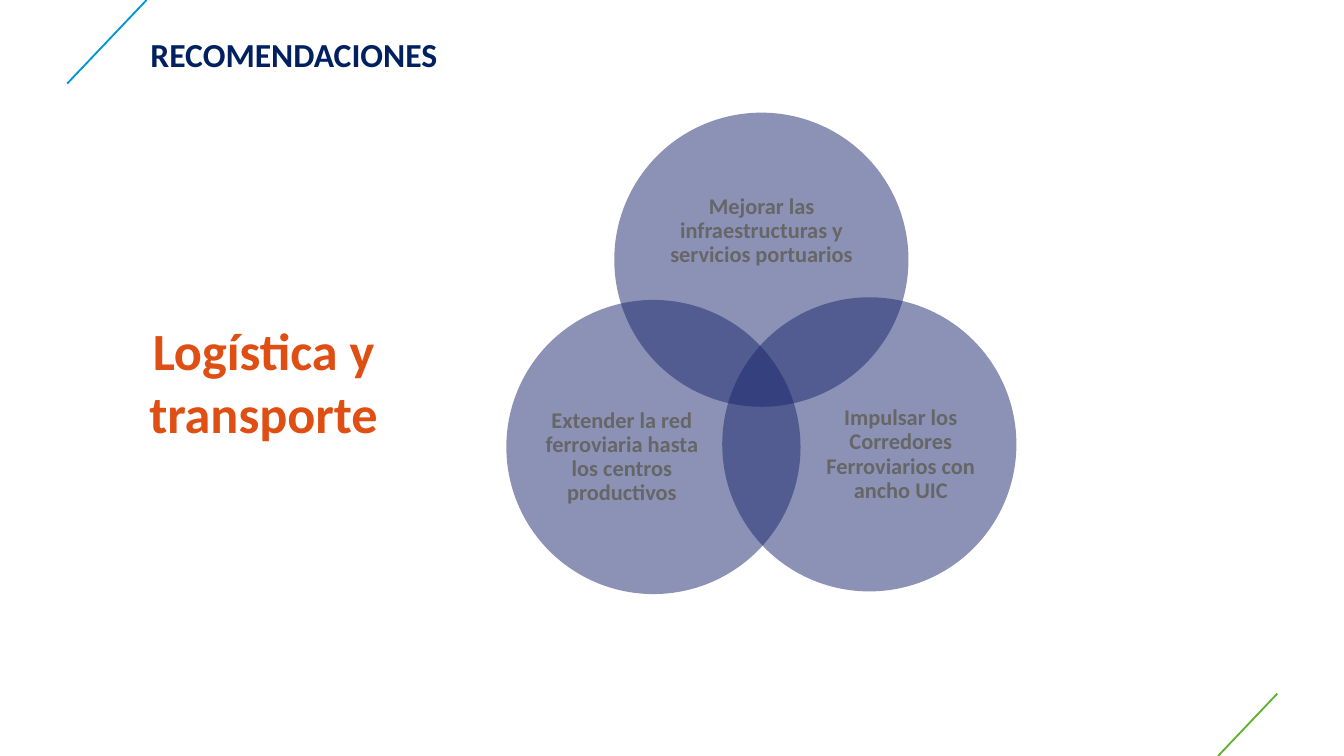
from lxml.etree import SubElement
from pptx import Presentation
from pptx.dml.color import RGBColor
from pptx.enum.shapes import MSO_CONNECTOR as Connector, MSO_SHAPE as Shape
from pptx.enum.text import MSO_ANCHOR as Anchor, MSO_AUTO_SIZE as AutoSize, PP_ALIGN as Align
from pptx.oxml.ns import qn
from pptx.util import Cm, Pt

WIDTH, HEIGHT = 25.4, 14.29
DIAMETER = 5.56


def color(hex_value):
    """Return the colour for a hex string."""
    return RGBColor.from_string(hex_value)


def write_text(shape, text, size=12, fill="666666", anchor=Anchor.TOP, spacing=None, inset=None):
    """Fill a shape with one bold, centred, wrapped paragraph."""
    frame = shape.text_frame
    frame.text = text
    frame.word_wrap = True
    frame.auto_size = AutoSize.NONE
    frame.vertical_anchor = anchor
    if inset is not None:
        frame.margin_left = frame.margin_right = Cm(inset)
        frame.margin_top = frame.margin_bottom = Cm(inset)
    paragraph = frame.paragraphs[0]
    paragraph.alignment = Align.CENTER
    paragraph.line_spacing = spacing
    font = paragraph.runs[0].font
    font.name, font.size, font.bold = "Calibri", Pt(size), True
    font.color.rgb = color(fill)


def add_corner_line(slide, left, top, width, height, stroke):
    """Draw a rising diagonal line across the given box."""
    line = slide.shapes.add_connector(
        Connector.STRAIGHT, Cm(left), Cm(top + height), Cm(left + width), Cm(top))
    line.line.color.rgb = color(stroke)
    line.line.width = Pt(1)
    SubElement(line._element.spPr, qn("a:effectLst"))


def add_title(slide, left, top, width, height):
    """Place the slide title in the given box."""
    title = slide.shapes.title
    title.left, title.top, title.width, title.height = map(Cm, (left, top, width, height))
    write_text(title, "RECOMENDACIONES", size=18, fill="002060")


def add_topic(slide, left, top, width, height):
    """Place the topic heading in the given box."""
    topic = slide.shapes.add_textbox(*map(Cm, (left, top, width, height)))
    write_text(topic, "Logística y transporte", size=28, fill="DF4E13")


def add_circle(slide, left, top):
    """Draw one half-transparent circle of the diagram."""
    circle = slide.shapes.add_shape(Shape.OVAL, Cm(left), Cm(top), Cm(DIAMETER), Cm(DIAMETER))
    circle.shadow.inherit = False
    circle.fill.solid()
    circle.fill.fore_color.rgb = color("1A276D")
    circle.line.fill.background()
    solid_color = circle._element.spPr.find(qn("a:solidFill"))[0]
    SubElement(solid_color, qn("a:alpha"), val="50000")


def add_venn(slide, left, top, width, height):
    """Draw three overlapping circles and their labels in the given box."""
    right, bottom = width - DIAMETER, height - DIAMETER
    label_width, label_margin = 3.35, 0.51
    far_side = DIAMETER - label_margin - label_width
    circles = [
        ("Mejorar las infraestructuras y servicios portuarios",
         right / 2, 0, (0.74, 0.99, 4.09, 2.51)),
        ("Impulsar los Corredores Ferroviarios con ancho UIC",
         right, bottom - 0.05, (far_side, 1.44, label_width, 3.07)),
        ("Extender la red ferroviaria hasta los centros productivos",
         0, bottom, (label_margin, 1.44, label_width, 3.07)),
    ]
    for text, x, y, (label_x, label_y, label_w, label_h) in circles:
        add_circle(slide, left + x, top + y)
        label = slide.shapes.add_textbox(
            Cm(left + x + label_x), Cm(top + y + label_y), Cm(label_w), Cm(label_h))
        write_text(label, text, anchor=Anchor.MIDDLE, spacing=0.9, inset=0)


def main():
    """Build the recommendations slide and save it."""
    presentation = Presentation()
    presentation.slide_width, presentation.slide_height = Cm(WIDTH), Cm(HEIGHT)
    slide = presentation.slides.add_slide(presentation.slide_layouts[5])
    add_corner_line(slide, 1.27, 0, 1.5, 1.58, "0097D7")
    add_corner_line(slide, 23.02, 13.11, 1.12, 1.18, "62B22F")
    add_title(slide, 2.09, 0.51, 6.93, 1.27)
    add_venn(slide, 9.57, 2.13, 9.64, 9.1)
    add_topic(slide, 2.54, 5.89, 4.88, 2.51)
    presentation.save("out.pptx")


if __name__ == "__main__":
    main()
